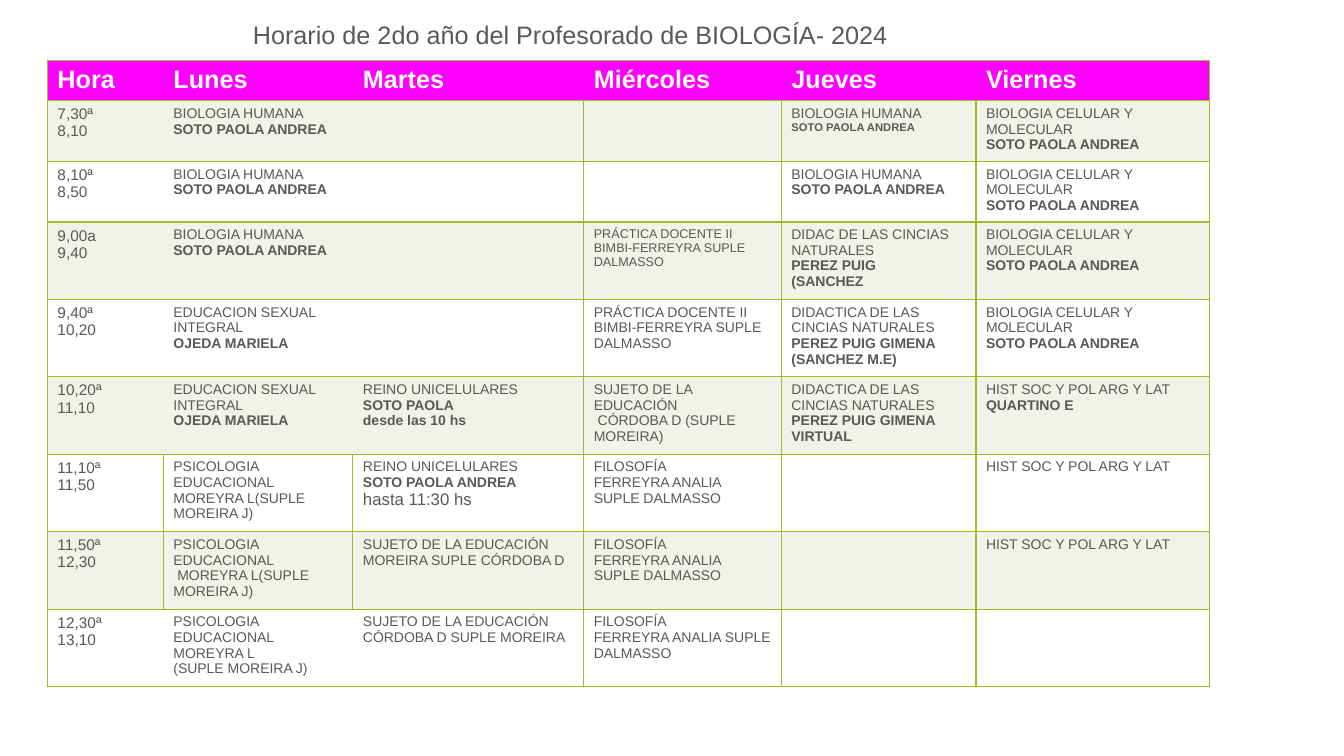
from lxml import etree
from pptx import Presentation
from pptx.dml.color import RGBColor
from pptx.enum.text import MSO_ANCHOR, PP_ALIGN
from pptx.oxml.ns import qn
from pptx.util import Inches, Pt

BOTTOM = MSO_ANCHOR.BOTTOM
LEFT = PP_ALIGN.LEFT

FONT = "Arial"
COLORS = {
    "text": "595959",
    "header": "FF00FF",
    "header_text": "FFFFFF",
    "band": "F0F3E7",
    "plain": "FFFFFF",
    "border": "A6B727",
}
TITLE = "Horario de 2do año del Profesorado de BIOLOGÍA- 2024"
DAYS = ["Hora", "Lunes", "Martes", "Miércoles", "Jueves", "Viernes"]
COLUMN_WIDTHS = [1.15, 1.88, 2.29, 1.96, 1.93, 2.32]
ROW_HEIGHTS = [0.4, 0.58, 0.57] + [0.72] * 6
OPEN_EDGES = (1, 2)
ROWS_WITH_ALL_EDGES = (6, 7)


def plain(*texts, size=10):
    return [(text, size, False) for text in texts]


def bold(*texts, size=10):
    return [(text, size, True) for text in texts]


def hours(start, end):
    return plain(start, end, size=11)


SOTO = bold("SOTO PAOLA ANDREA")
HUMANA = plain("BIOLOGIA HUMANA")
HUMANA_SOTO = HUMANA + SOTO
CELULAR = plain("BIOLOGIA CELULAR Y MOLECULAR") + SOTO
SEXUAL = plain("EDUCACION SEXUAL INTEGRAL") + bold("OJEDA MARIELA")
PRACTICA = ("PRÁCTICA DOCENTE II", "BIMBI-FERREYRA SUPLE DALMASSO")
DIDACTICA = plain("DIDACTICA DE LAS CINCIAS NATURALES") + bold("PEREZ PUIG GIMENA")
REINO = plain("REINO UNICELULARES")
FILOSOFIA = plain("FILOSOFÍA", "FERREYRA ANALIA", "SUPLE DALMASSO")
HISTORIA = plain("HIST SOC Y POL ARG Y LAT")
PSICOLOGIA = "PSICOLOGIA EDUCACIONAL"
SUJETO = "SUJETO DE LA EDUCACIÓN"

SCHEDULE = [
    [hours("7,30ª", "8,10"), HUMANA_SOTO, [], [],
     HUMANA + bold("SOTO PAOLA ANDREA", size=8), CELULAR],
    [hours("8,10ª", "8,50"), HUMANA_SOTO, [], [], HUMANA_SOTO, CELULAR],
    [hours("9,00a", "9,40"), HUMANA_SOTO, [], plain(*PRACTICA, size=9),
     plain("DIDAC DE LAS CINCIAS NATURALES") + bold("PEREZ PUIG", "(SANCHEZ"), CELULAR],
    [hours("9,40ª", "10,20"), SEXUAL, [], plain(*PRACTICA),
     DIDACTICA + bold("(SANCHEZ M.E)"), CELULAR],
    [hours("10,20ª", "11,10"), SEXUAL, REINO + bold("SOTO PAOLA", "desde las 10 hs"),
     plain(SUJETO, " CÓRDOBA D (SUPLE MOREIRA)"),
     DIDACTICA + bold("VIRTUAL"), HISTORIA + bold("QUARTINO E")],
    [hours("11,10ª", "11,50"), plain(PSICOLOGIA, "MOREYRA L(SUPLE MOREIRA J)"),
     REINO + SOTO + plain("hasta 11:30 hs", size=12), FILOSOFIA, [], HISTORIA],
    [hours("11,50ª", "12,30"), plain(PSICOLOGIA, " MOREYRA L(SUPLE MOREIRA J)"),
     plain(SUJETO, "MOREIRA SUPLE CÓRDOBA D"), FILOSOFIA, [], HISTORIA],
    [hours("12,30ª", "13,10"),
     plain(PSICOLOGIA + " MOREYRA L", "(SUPLE MOREIRA J)"),
     plain(SUJETO, "CÓRDOBA D SUPLE MOREIRA"),
     plain("FILOSOFÍA", "FERREYRA ANALIA SUPLE DALMASSO"), [], []],
]


def write_lines(frame, lines, color):
    for index, (text, size, is_bold) in enumerate(lines):
        para = frame.paragraphs[0] if index == 0 else frame.add_paragraph()
        para.alignment = LEFT
        span = para.add_run()
        span.text = text
        span.font.name = FONT
        span.font.size = Pt(size)
        span.font.bold = is_bold
        span.font.color.rgb = RGBColor.from_string(COLORS[color])


def add_title(page, left, top, width, height):
    box = page.shapes.add_textbox(Inches(left), Inches(top), Inches(width), Inches(height))
    frame = box.text_frame
    frame.word_wrap = True
    frame.vertical_anchor = BOTTOM
    write_lines(frame, plain(TITLE, size=18), "text")
    frame.paragraphs[0].line_spacing = 0.9


def has_edge(row, edge):
    if edge in (0, len(DAYS)):
        return True
    if row == 0:
        return False
    return edge not in OPEN_EDGES or row in ROWS_WITH_ALL_EDGES


def set_borders(cell, row, column):
    sides = {"L": has_edge(row, column), "R": has_edge(row, column + 1), "T": True, "B": True}
    properties = cell._tc.get_or_add_tcPr()
    for side, visible in sides.items():
        line = etree.SubElement(properties, qn(f"a:ln{side}"), w=str(Pt(1) if visible else 0))
        if visible:
            fill = etree.SubElement(line, qn("a:solidFill"))
            etree.SubElement(fill, qn("a:srgbClr"), val=COLORS["border"])
        else:
            etree.SubElement(line, qn("a:noFill"))


def add_schedule(page, left, top):
    rows = [bold(day, size=18) for day in DAYS]
    rows = [rows] + SCHEDULE
    table = page.shapes.add_table(
        len(rows), len(DAYS), Inches(left), Inches(top),
        Inches(sum(COLUMN_WIDTHS)), Inches(sum(ROW_HEIGHTS))).table
    table.first_row = True
    table.horz_banding = False
    for column, width in enumerate(COLUMN_WIDTHS):
        table.columns[column].width = Inches(width)
    for row, entries in enumerate(rows):
        table.rows[row].height = Inches(ROW_HEIGHTS[row])
        background = "header" if row == 0 else "band" if row % 2 else "plain"
        for column, lines in enumerate(entries):
            cell = table.cell(row, column)
            set_borders(cell, row, column)
            cell.fill.solid()
            cell.fill.fore_color.rgb = RGBColor.from_string(COLORS[background])
            write_lines(cell.text_frame, lines, "header_text" if row == 0 else "text")


def main():
    deck = Presentation()
    deck.slide_width = Inches(13.33)
    deck.slide_height = Inches(7.5)
    page = deck.slides.add_slide(deck.slide_layouts[6])
    add_title(page, 2.41, 0, 10.25, 0.54)
    add_schedule(page, 0.47, 0.6)
    deck.save("out.pptx")


if __name__ == "__main__":
    main()
